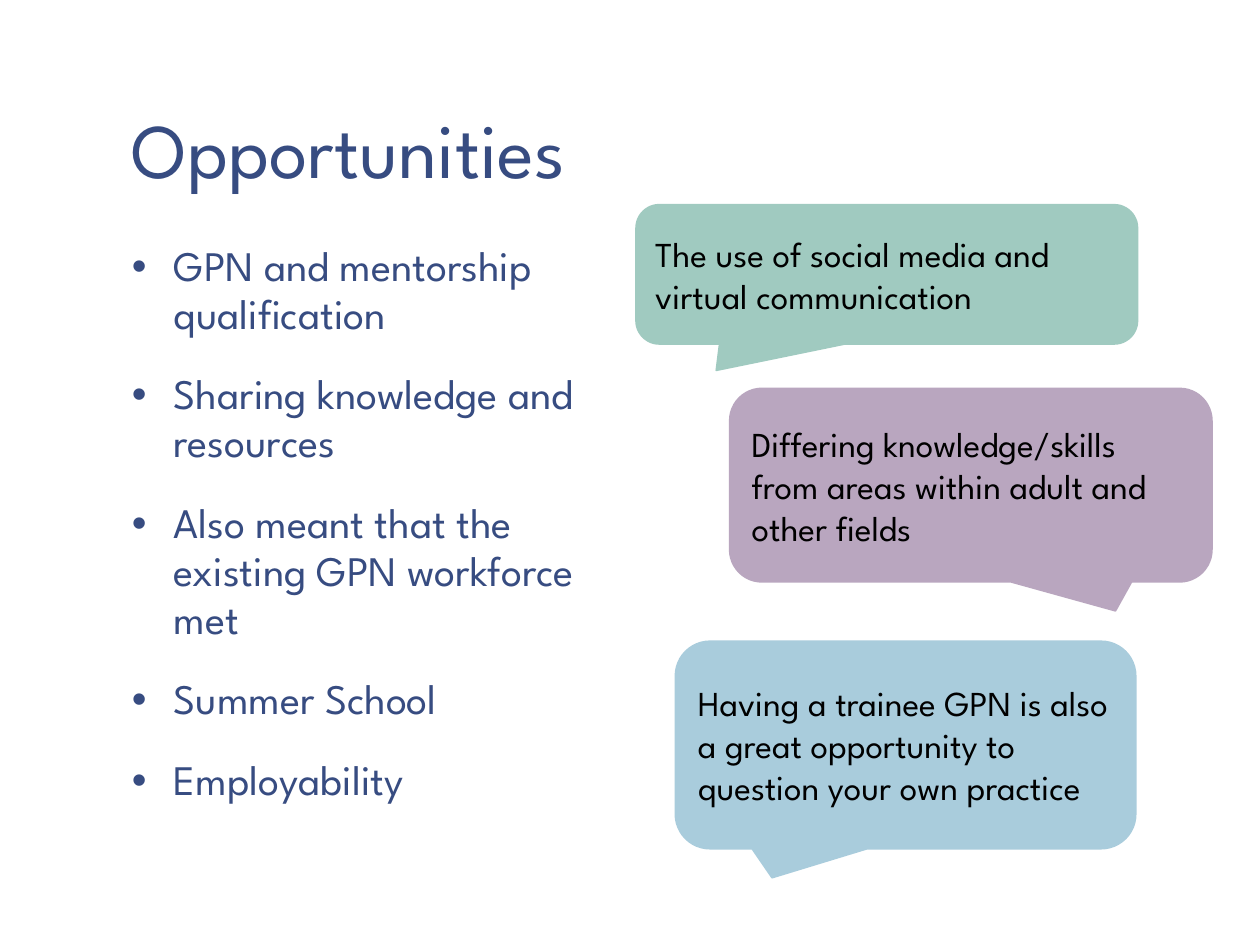
from lxml import etree
from pptx import Presentation
from pptx.dml.color import RGBColor
from pptx.enum.shapes import MSO_SHAPE
from pptx.enum.text import MSO_ANCHOR, PP_ALIGN
from pptx.oxml.ns import qn
from pptx.util import Pt

CALLOUT = MSO_SHAPE.ROUNDED_RECTANGULAR_CALLOUT
MIDDLE, BOTTOM = MSO_ANCHOR.MIDDLE, MSO_ANCHOR.BOTTOM
LEFT = PP_ALIGN.LEFT
FONT = "League Spartan"
WHITE = RGBColor(0xFF, 0xFF, 0xFF)
BLACK = RGBColor(0x00, 0x00, 0x00)
NAVY = RGBColor(0x37, 0x4C, 0x81)
GREEN = RGBColor(0xA0, 0xCA, 0xC0)
MAUVE = RGBColor(0xB9, 0xA6, 0xBF)
BLUE = RGBColor(0xA9, 0xCC, 0xDC)


def style(p, size, color):
    p.alignment = LEFT
    for r in p.runs:
        r.font.name = FONT
        r.font.size = Pt(size)
        r.font.color.rgb = color


def add_text_box(left, top, width, height):
    tf = s.shapes.add_textbox(Pt(left), Pt(top), Pt(width), Pt(height)).text_frame
    tf.word_wrap = True
    tf.margin_left = tf.margin_right = Pt(9.4)
    tf.margin_top = tf.margin_bottom = Pt(5)
    return tf


prs = Presentation()
prs.slide_width, prs.slide_height = Pt(720), Pt(540)
s = prs.slides.add_slide(prs.slide_layouts[6])
s.background.fill.solid()
s.background.fill.fore_color.rgb = WHITE

# Title
tf = add_text_box(66, 6, 600, 110)
tf.vertical_anchor = BOTTOM
tf.text = "Opportunities"
tf.paragraphs[0].line_spacing = 0.85
style(tf.paragraphs[0], 44, NAVY)

# Bulleted list
tf = add_text_box(66, 134, 294, 352)
tf.text = "\n".join([
    "GPN and mentorship qualification",
    "Sharing knowledge and resources",
    "Also meant that the existing GPN workforce met",
    "Summer School",
    "Employability",
])
for i, p in enumerate(tf.paragraphs):
    p.line_spacing = 0.95
    p.space_before = Pt(18.7 if i else 0)
    pPr = p._p.get_or_add_pPr()
    pPr.set("marL", str(Pt(24)))
    pPr.set("indent", str(-Pt(24)))
    etree.SubElement(pPr, qn("a:buFont")).set("typeface", "Arial")
    etree.SubElement(pPr, qn("a:buChar")).set("char", "•")
    style(p, 24, NAVY)

# Speech bubbles: position, tail tip, colour, wording
bubbles = [
    ((363.5, 117, 286.5, 79.5), (-0.34, 0.69), GREEN,
     "The use of social media and virtual communication"),
    ((417, 222, 275.5, 110.5), (0.3, 0.65), MAUVE,
     "Differing knowledge/skills from areas within adult and other fields"),
    ((386, 366.5, 263, 118.5), (-0.29, 0.64), BLUE,
     "Having a trainee GPN is also a great opportunity to question your own practice"),
]
for box, tail, color, text in bubbles:
    sp = s.shapes.add_shape(CALLOUT, *map(Pt, box))
    sp.adjustments[0], sp.adjustments[1] = tail
    sp.shadow.inherit = False
    sp.fill.solid()
    sp.fill.fore_color.rgb = color
    sp.line.color.rgb = color
    sp.line.width = Pt(1)
    tf = sp.text_frame
    tf.word_wrap = True
    tf.vertical_anchor = MIDDLE
    tf.text = text
    style(tf.paragraphs[0], 20, BLACK)

prs.save("out.pptx")
